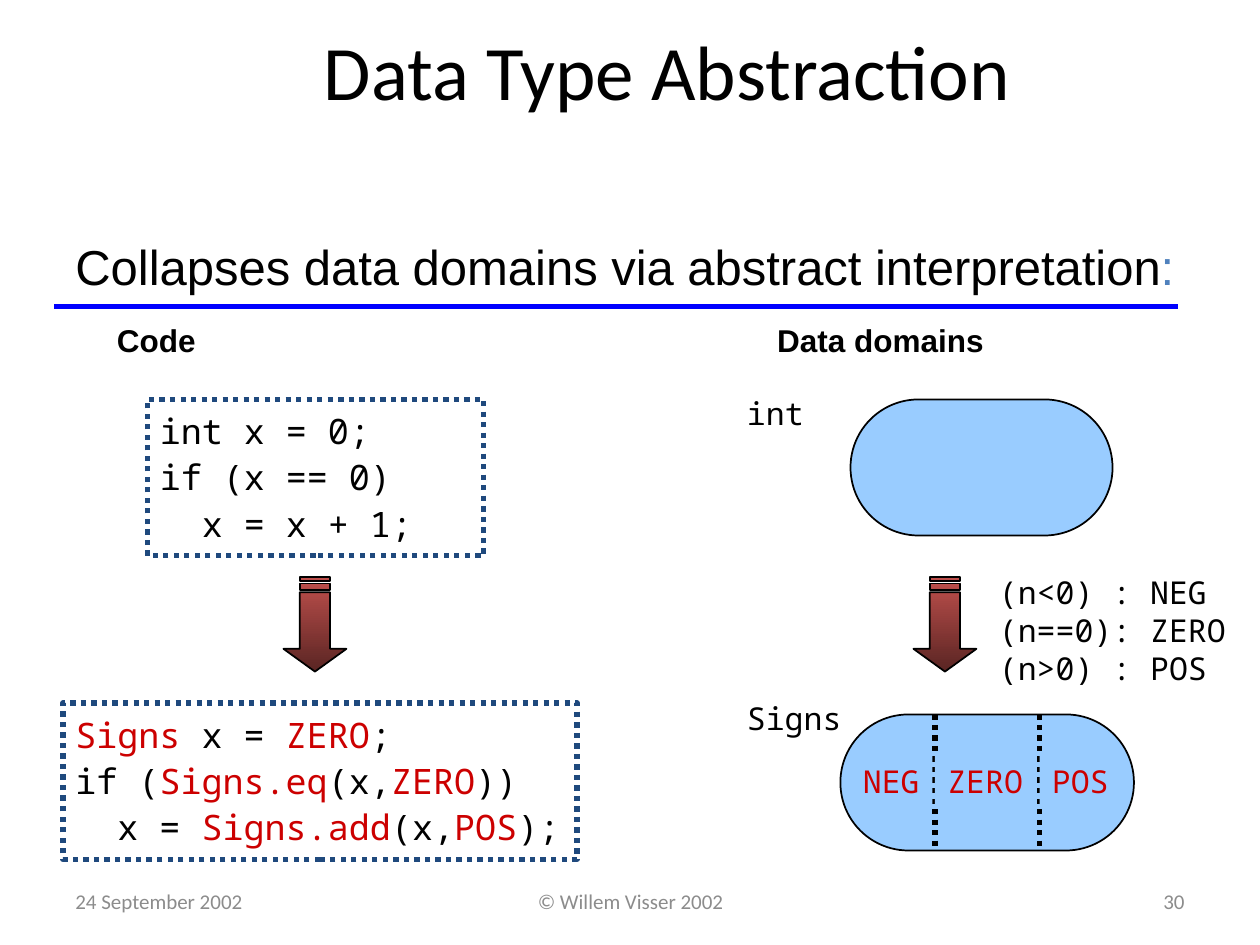
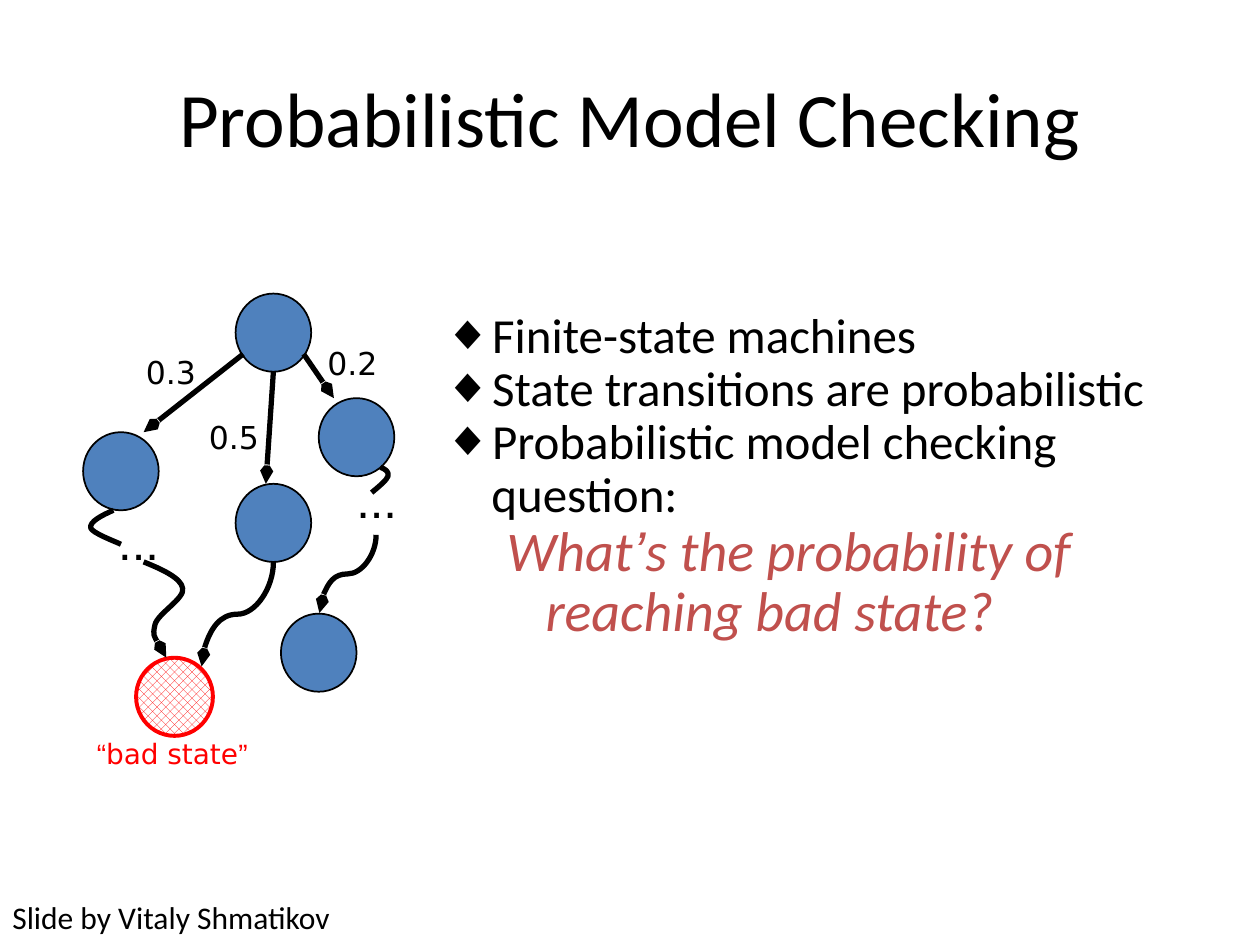
from lxml.etree import SubElement
from pptx import Presentation
from pptx.dml.color import RGBColor
from pptx.enum.dml import MSO_LINE as DASH, MSO_PATTERN as PATTERN
from pptx.enum.shapes import MSO_CONNECTOR as LINK, MSO_SHAPE as SHAPE
from pptx.enum.text import MSO_ANCHOR as ANCHOR, PP_ALIGN as ALIGN
from pptx.oxml.ns import qn
from pptx.util import Inches, Pt

rgb = RGBColor.from_string
BLACK, RED, BLUE, SKY = "000000", "CC0000", "4F81BD", "99CCFF"
NAVY, GREY, BRIGHT, BRICK = "1F497D", "8C8C8C", "FF0000", "C0504D"
MONO, ARIAL, SANS, MAIN = "Noto Sans Mono", "Arial", "DejaVu Sans", "Calibri"


def write(shape, text, size, font, color=BLACK, accent=RED,
          align=ALIGN.LEFT, space=None, wrap=False, bold=False):
    frame = shape.text_frame
    frame.word_wrap = wrap
    frame.text = text
    for para in frame.paragraphs:
        parts = para.text.split("|")
        para.text = ""
        para.alignment = align
        para.line_spacing = space
        for n, part in enumerate(parts):
            if part:
                run = para.add_run()
                run.text = part
                run.font.size = Pt(size)
                run.font.name = font
                run.font.bold = bold
                run.font.color.rgb = rgb(accent if n % 2 else color)
    return frame


def paint(item, line=None, width=1, fill=None, dash=None, tail=False):
    props = item._element.spPr
    if hasattr(item, "fill"):
        if fill:
            item.fill.solid()
            item.fill.fore_color.rgb = rgb(fill)
        else:
            item.fill.background()
    if line:
        item.line.color.rgb = rgb(line)
        item.line.width = Pt(width)
        if dash:
            item.line.dash_style = dash
    else:
        item.line.fill.background()
    if tail:
        SubElement(props.find(qn("a:ln")), qn("a:tailEnd"), type="arrow", w="sm")
    SubElement(props, qn("a:effectLst"))


deck = Presentation()
deck.slide_width, deck.slide_height = Inches(10), Inches(7.5)

types = deck.slides.add_slide(deck.slide_layouts[5])
check = deck.slides.add_slide(deck.slide_layouts[1])
for slide, name, box, space in [
    (types, "Data Type Abstraction", (2.17, 0, 6.25, 1.25), 0.8),
    (check, "Probabilistic Model Checking", (0.5, 0.3, 9, 1.25), None),
]:
    title = slide.shapes.title
    title.left, title.top, title.width, title.height = map(Inches, box)
    write(title, name, 44, MAIN, align=ALIGN.CENTER, space=space, wrap=True)
    title.text_frame.vertical_anchor = ANCHOR.MIDDLE

shapes = types.shapes
for left, width, text, align in [
    (0.5, 2.33, "24 September 2002", ALIGN.LEFT),
    (3.42, 3.17, "© Willem Visser 2002", ALIGN.CENTER),
    (7.17, 2.33, "30", ALIGN.RIGHT),
]:
    foot = shapes.add_textbox(*map(Inches, (left, 6.95, width, 0.4)))
    frame = write(foot, text, 12, MAIN, GREY, align=align, wrap=True)
    frame.vertical_anchor = ANCHOR.MIDDLE

for box, code in [
    ((1.17, 3.17, 2.67, 1.24), "int x = 0;\nif (x == 0)\n  x = x + 1;"),
    ((0.5, 5.58, 4.08, 1.24),
     "|Signs| x = |ZERO|;\nif (|Signs.eq|(x,|ZERO|))\n"
     "  x = |Signs.add|(x,|POS|);"),
]:
    block = shapes.add_shape(SHAPE.RECTANGLE, *map(Inches, box))
    paint(block, NAVY, 3, dash=DASH.ROUND_DOT)
    frame = write(block, code, 20, MONO, space=1.1, wrap=True)
    frame.vertical_anchor = ANCHOR.TOP

for box in [(6.75, 3.17, 2.08, 1.08), (6.67, 5.67, 2.33, 1.08)]:
    pill = shapes.add_shape(SHAPE.ROUNDED_RECTANGLE, *map(Inches, box))
    pill.adjustments[0] = 0.5
    paint(pill, BLACK, fill=SKY)

for x in (7.42, 8.25):
    split = shapes.add_connector(LINK.STRAIGHT, *map(Inches, (x, 5.67, x, 6.75)))
    paint(split, BLACK, 3, dash=DASH.ROUND_DOT)

for left, width, sign in [(6.75, 0.65, "NEG"), (8.25, 0.65, "POS"), (7.42, 0.81, "ZERO")]:
    tag = shapes.add_textbox(*map(Inches, (left, 6, width, 0.4)))
    paint(tag, fill=SKY)
    write(tag, sign, 18, MONO, RED)

for box, text, size, font, bold in [
    ((0.5, 1.83, 8.95, 0.57),
     "Collapses data domains via abstract interpretation|:", 28, ARIAL, False),
    ((0.83, 2.5, 1.03, 0.5), "Code", 18, ARIAL, True),
    ((6.07, 2.5, 2.39, 0.5), "Data domains", 18, ARIAL, True),
    ((5.83, 3.08, 0.65, 0.4), "int", 18, MONO, False),
    ((5.83, 5.5, 0.96, 0.4), "Signs", 18, MONO, False),
    ((7.83, 4.5, 2.17, 1), "(n<0) : NEG\n(n==0): ZERO\n(n>0) : POS", 18, MONO, False),
]:
    label = shapes.add_textbox(*map(Inches, box))
    write(label, text, size, font, accent=BLUE, bold=bold)

for mid in (2.5, 7.5):
    west, east = Inches(mid - 0.12), Inches(mid + 0.12)
    neck = Inches(5.15)
    pen = shapes.build_freeform(west, Inches(4.7))
    pen.add_line_segments([
        (west, neck), (Inches(mid - 0.25), neck), (Inches(mid), Inches(5.33)),
        (Inches(mid + 0.25), neck), (east, neck), (east, Inches(4.7))])
    for top, bottom in [(4.63, 4.68), (4.58, 4.61)]:
        high, low = Inches(top), Inches(bottom)
        pen.move_to(west, high)
        pen.add_line_segments([(east, high), (east, low), (west, low)])
    arrow = pen.convert_to_shape()
    paint(arrow, BLACK)
    arrow.fill.gradient()
    arrow.fill.gradient_angle = 270
    for stop, color in zip(arrow.fill.gradient_stops, (BRICK, "5A2523")):
        stop.color.rgb = rgb(color)

rule = shapes.add_connector(LINK.STRAIGHT, *map(Inches, (0.43, 2.43, 9.35, 2.43)))
paint(rule, "0000FF", 3)

shapes = check.shapes
for left, top in [(1.87, 2.33), (2.53, 3.16), (0.66, 3.43), (2.23, 4.87), (1.87, 3.84)]:
    state = shapes.add_shape(SHAPE.OVAL, *map(Inches, (left, top, 0.6, 0.62)))
    paint(state, BLACK, fill=BLUE)

bad = shapes.add_shape(SHAPE.OVAL, *map(Inches, (1.08, 5.22, 0.61, 0.62)))
paint(bad, BRIGHT, 2.25)
bad.fill.patterned()
bad.fill.pattern = PATTERN.PERCENT_50
bad.fill.fore_color.rgb = rgb(BRIGHT)
bad.fill.back_color.rgb = rgb("FFFFFF")

for ends in [(1.93, 2.81, 1.14, 3.43), (2.41, 2.81, 2.65, 3.16), (2.17, 2.95, 2.11, 3.84)]:
    edge = shapes.add_connector(LINK.STRAIGHT, *map(Inches, ends))
    paint(edge, BLACK, 3, tail=True)

for left, top, width, height in [(1.47, 4.59, 0.83, 0.57), (2.45, 4.33, 0.62, 0.45)]:
    edge = shapes.add_connector(
        LINK.CURVE, *map(Inches, (left, top, left + width, top + height)))
    edge._element.spPr.find(qn("a:xfrm")).set("rot", "5400000")
    paint(edge, BLACK, 3, tail=True)

for start, points, tail in [
    ((1.14, 4.46), [(1.29, 4.52), (1.44, 4.59), (1.45, 4.67),
                    (1.47, 4.75), (1.25, 4.87), (1.23, 4.96),
                    (1.21, 5.05), (1.26, 5.13), (1.32, 5.22)], True),
    ((0.9, 4.05), [(0.81, 4.09), (0.71, 4.14), (0.72, 4.19),
                   (0.73, 4.23), (0.92, 4.3), (0.96, 4.32)], False),
    ((3.02, 3.71), [(3.05, 3.72), (3.09, 3.74), (3.08, 3.78),
                    (3.07, 3.81), (3.01, 3.86), (2.95, 3.91)], False),
]:
    pen = shapes.build_freeform(*map(Inches, start))
    pen.add_line_segments([(Inches(x), Inches(y)) for x, y in points], close=False)
    curve = pen.convert_to_shape()
    trail = next(curve._element.iter(qn("a:path")))
    steps = trail.findall(qn("a:lnTo"))
    for n in range(0, len(steps), 3):
        bend = SubElement(trail, qn("a:cubicBezTo"))
        for step in steps[n:n + 3]:
            bend.append(step[0])
            trail.remove(step)
    paint(curve, BLACK, 3, tail=tail)

for box, text, size, font in [
    ((0.84, 4.01, 0.6, 0.57), "...", 28, ARIAL),
    ((2.73, 3.68, 0.6, 0.57), "...", 28, ARIAL),
    ((1.06, 2.75, 0.61, 0.4), "0.3", 18, SANS),
    ((1.56, 3.27, 0.61, 0.4), "0.5", 18, SANS),
    ((2.5, 2.68, 0.61, 0.4), "0.2", 18, SANS),
    ((0, 7.08, 2.76, 0.4), "Slide by Vitaly Shmatikov", 18, MAIN),
]:
    write(shapes.add_textbox(*map(Inches, box)), text, size, font)

note = shapes.add_textbox(*map(Inches, (0.67, 5.8, 1.45, 0.37)))
frame = write(note, "“|bad state|”", 16, ARIAL, BRIGHT, BRIGHT)
frame.paragraphs[0].runs[1].font.name = SANS

body = check.placeholders[1]
body.left, body.top, body.width, body.height = map(Inches, (3.42, 2.42, 6.58, 3.92))
frame = write(body, "Finite-state machines\nState transitions are probabilistic\n"
              "Probabilistic model checking question:\n"
              "What|’|s the probability of reaching bad state?",
              28, MAIN, space=0.9, wrap=True)
paras = frame.paragraphs
ask = paras[-1]
ask.level = 1
for para in paras:
    para.space_before = Pt(0)
    left, hang = (0.81, -0.31) if para.level else (0.38, -0.38)
    props = para._p.get_or_add_pPr()
    props.set("marL", str(Inches(left)))
    props.set("indent", str(Inches(hang)))
    if para.level:
        SubElement(props, qn("a:buNone"))
    else:
        SubElement(props, qn("a:buChar"), char="◆")
for run in ask.runs:
    run.font.size = Pt(32)
    run.font.italic = True
    run.font.color.rgb = rgb(BRICK)
ask.runs[1].font.name = ARIAL

deck.save("out.pptx")
